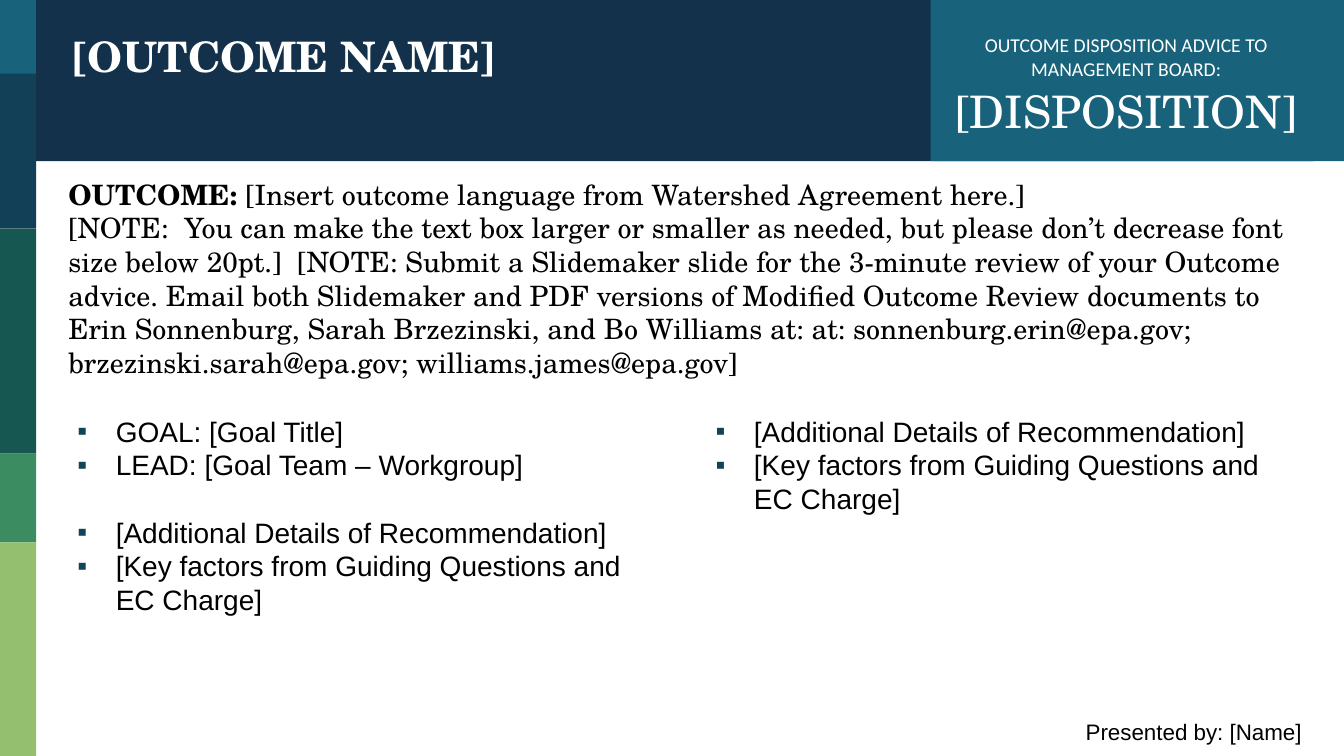
from dataclasses import dataclass

from lxml.etree import SubElement
from pptx import Presentation
from pptx.dml.color import RGBColor
from pptx.enum.shapes import MSO_SHAPE as Form
from pptx.enum.text import MSO_AUTO_SIZE as Fit, PP_ALIGN as Align
from pptx.oxml.ns import qn
from pptx.util import Emu, Pt

PX = 9144  # EMU per px, 100 px to the inch
COLORS = {
    "teal": "18637B", "blue": "124057", "pine": "165751", "green": "3B8D61",
    "lime": "94BF6E", "navy": "13314B", "white": "FFFFFF", "black": "000000",
    "bullet": "114454",
}
SERIF, SANS, LABEL = "TeX Gyre Schola", "Arial", "Calibri"


@dataclass
class Box:
    x: int
    y: int
    w: int
    h: int

    def emu(self) -> list[Emu]:
        return [Emu(v * PX) for v in (self.x, self.y, self.w, self.h)]


@dataclass
class Run:
    text: str
    size: int = 20
    font: str = SERIF
    color: str = "black"
    bold: bool = False


@dataclass
class Para:
    runs: list[Run]
    align: Align = Align.LEFT
    line: float | Pt | None = None
    after: float = 0
    bullet: bool = False


@dataclass
class Text:
    box: Box
    paras: list[Para]
    pad: tuple[int, int] = (10, 5)
    grow: bool = False


def item(text: str, after: float = 0) -> Para:
    """Bulleted line of a detail column."""
    return Para([Run(text, font=SANS)], line=Pt(24), after=after, bullet=True)


DETAILS = ("[Additional Details of Recommendation]",
           "[Key factors from Guiding Questions and EC Charge]")
RECTS = [
    (Box(0, 0, 36, 77), "teal"),
    (Box(0, 73, 36, 154), "blue"),
    (Box(0, 227, 36, 223), "pine"),
    (Box(0, 450, 36, 88), "green"),
    (Box(0, 538, 36, 212), "lime"),
    (Box(36, 0, 1267, 160), "navy"),
    (Box(923, 0, 410, 160), "teal"),
]
TEXTS = [
    Text(Box(58, 21, 850, 126), [
        Para([Run("[OUTCOME NAME]", 30, color="white", bold=True)],
             line=1.05, after=13.3),
    ], (13, 7)),
    Text(Box(933, 24, 368, 118), [
        Para([
            Run("OUTCOME DISPOSITION ADVICE TO MANAGEMENT BOARD: ", 14, LABEL, "white"),
            Run("[DISPOSITION]", 32, color="white"),
        ], Align.CENTER, 1.05, 13.3),
    ], (13, 7)),
    Text(Box(58, 171, 1243, 220), [
        Para([
            Run("OUTCOME: ", bold=True),
            Run("[Insert outcome language from Watershed Agreement here.]"),
        ]),
        Para([Run(
            "[NOTE:  You can make the text box larger or smaller as needed, but "
            "please don’t decrease font size below 20pt.]  [NOTE: Submit a "
            "Slidemaker slide for the 3-minute review of your Outcome advice. "
            "Email both Slidemaker and PDF versions of Modified Outcome Review "
            "documents to Erin Sonnenburg, Sarah Brzezinski, and Bo Williams at: "
            "at: sonnenburg.erin@epa.gov; brzezinski.sarah@epa.gov; "
            "williams.james@epa.gov]")]),
    ]),
    Text(Box(721, 708, 580, 37), [
        Para([Run("Presented by: [Name]", 16, SANS)], Align.RIGHT),
    ], grow=True),
    Text(Box(67, 401, 600, 315), [
        item("GOAL: [Goal Title]"),
        item("LEAD: [Goal Team – Workgroup]", after=24),
        *map(item, DETAILS),
    ], (10, 10)),
    Text(Box(700, 401, 600, 315), [*map(item, DETAILS)], (10, 10)),
]


def rgb(name: str) -> RGBColor:
    return RGBColor.from_string(COLORS[name])


def add_rect(slide, box: Box, color: str) -> None:
    rect = slide.shapes.add_shape(Form.RECTANGLE, *box.emu())
    rect.shadow.inherit = False
    rect.fill.solid()
    rect.fill.fore_color.rgb = rgb(color)
    rect.line.fill.background()


def add_bullet(para) -> None:
    props = para._p.get_or_add_pPr()
    props.set("marL", str(38 * PX))
    props.set("indent", str(-38 * PX))
    tint = SubElement(props, qn("a:buClr"))
    SubElement(tint, qn("a:srgbClr"), val=COLORS["bullet"])
    SubElement(props, qn("a:buFont"), typeface=SANS)
    SubElement(props, qn("a:buChar"), char="▪")


def add_text(slide, text: Text) -> None:
    frame = slide.shapes.add_textbox(*text.box.emu()).text_frame
    frame.word_wrap = True
    frame.auto_size = Fit.SHAPE_TO_FIT_TEXT if text.grow else Fit.NONE
    side, edge = (Emu(v * PX) for v in text.pad)
    frame.margin_left = frame.margin_right = side
    frame.margin_top = frame.margin_bottom = edge
    for i, spec in enumerate(text.paras):
        para = frame.add_paragraph() if i else frame.paragraphs[0]
        para.alignment = spec.align
        para.line_spacing = spec.line
        para.space_after = Pt(spec.after)
        if spec.bullet:
            add_bullet(para)
        for part in spec.runs:
            run = para.add_run()
            run.text = part.text
            run.font.name = part.font
            run.font.size = Pt(part.size)
            run.font.bold = part.bold
            run.font.color.rgb = rgb(part.color)


def main() -> None:
    deck = Presentation()
    deck.slide_width, deck.slide_height = Emu(1333 * PX), Emu(750 * PX)
    slide = deck.slides.add_slide(deck.slide_layouts[6])
    for box, color in RECTS:
        add_rect(slide, box, color)
    for text in TEXTS:
        add_text(slide, text)
    deck.save("out.pptx")


if __name__ == "__main__":
    main()
